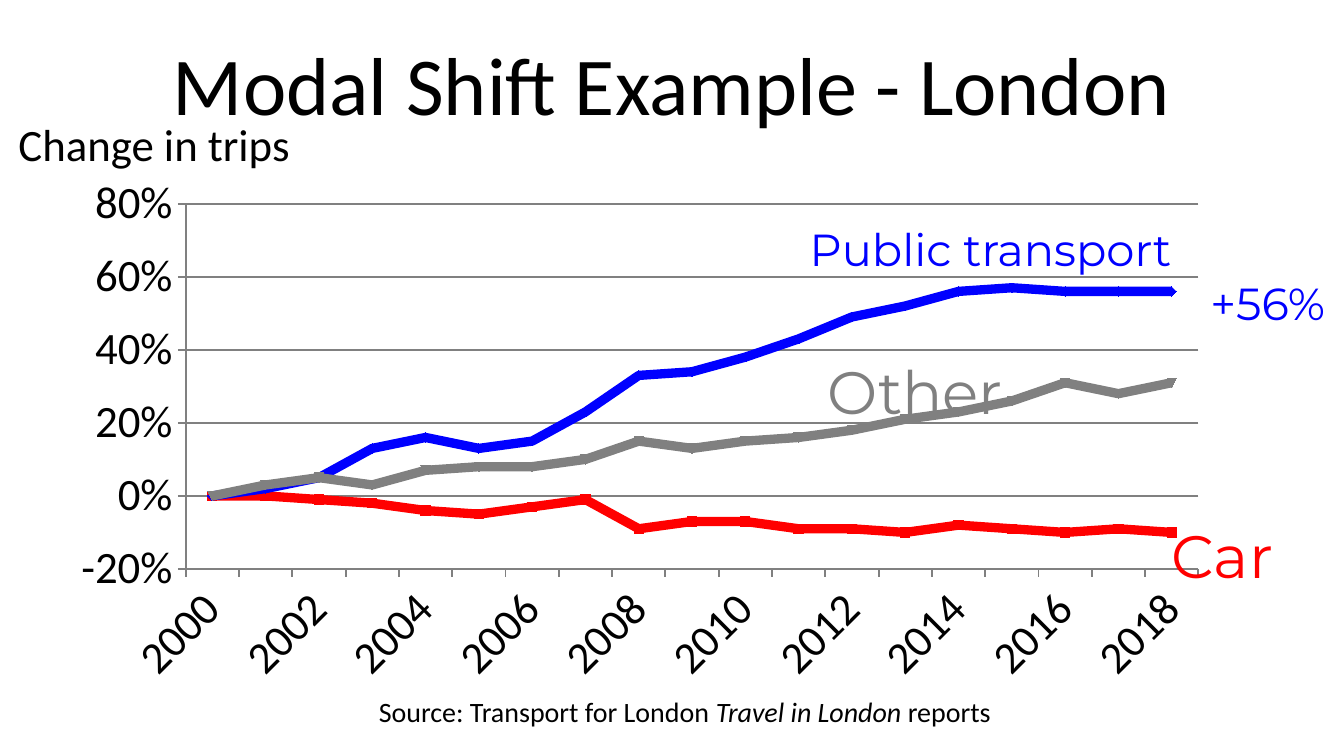
from dataclasses import dataclass

from lxml import etree
from pptx import Presentation
from pptx.chart.data import CategoryChartData
from pptx.dml.color import RGBColor
from pptx.enum.chart import XL_AXIS_CROSSES, XL_CHART_TYPE, XL_TICK_LABEL_POSITION, XL_TICK_MARK
from pptx.enum.text import MSO_ANCHOR, PP_ALIGN
from pptx.oxml import parse_xml
from pptx.oxml.ns import nsdecls, qn
from pptx.util import Cm, Pt

LINE = XL_CHART_TYPE.LINE
AT_MINIMUM = XL_AXIS_CROSSES.MINIMUM
LABELS_LOW = XL_TICK_LABEL_POSITION.LOW
TICK_OUT = XL_TICK_MARK.OUTSIDE
TICK_NONE = XL_TICK_MARK.NONE
LEFT, CENTER = PP_ALIGN.LEFT, PP_ALIGN.CENTER
MIDDLE = MSO_ANCHOR.MIDDLE


@dataclass(frozen=True)
class Theme:
    body: str = "Calibri"
    accent: str = "Montserrat"
    ink: RGBColor = RGBColor(0, 0, 0)
    car: RGBColor = RGBColor(255, 0, 0)
    transit: RGBColor = RGBColor(0, 0, 255)
    other: RGBColor = RGBColor(128, 128, 128)
    title: Pt = Pt(44)
    large: Pt = Pt(32)
    label: Pt = Pt(24)
    source: Pt = Pt(15)
    trend: Pt = Pt(5)
    rule: Pt = Pt(1)


THEME = Theme()
YEARS = range(2000, 2019)
TRENDS = [
    ("Car", THEME.car,
     [0, 0, -.01, -.02, -.04, -.05, -.03, -.01, -.09, -.07, -.07, -.09, -.09,
      -.1, -.08, -.09, -.1, -.09, -.1]),
    ("Public transport", THEME.transit,
     [0, .02, .05, .13, .16, .13, .15, .23, .33, .34, .38, .43, .49, .52, .56,
      .57, .56, .56, .56]),
    ("Other", THEME.other,
     [0, .03, .05, .03, .07, .08, .08, .1, .15, .13, .15, .16, .18, .21, .23,
      .26, .31, .28, .31]),
]
PLOT = {"x": 0.11, "y": 0.07, "w": 0.87, "h": 0.69}


def box(*lengths):
    return [Cm(length) for length in lengths]


def set_font(font, size, name=THEME.body, color=THEME.ink, italic=False):
    formats = {"size": size, "name": name, "bold": False, "italic": italic}
    for attribute, value in formats.items():
        setattr(font, attribute, value)
    font.color.rgb = color


def add_title(slide, area, text):
    title = slide.shapes.title
    for side, length in zip(("left", "top", "width", "height"), area):
        setattr(title, side, length)
    title.text_frame.text = text
    title.text_frame.vertical_anchor = MIDDLE
    heading = title.text_frame.paragraphs[0]
    heading.alignment = CENTER
    set_font(heading.runs[0].font, THEME.title)


def add_label(slide, area, runs, size, align=CENTER, name=THEME.accent, color=THEME.ink):
    frame = slide.shapes.add_textbox(*area).text_frame
    frame.word_wrap = True
    line = frame.paragraphs[0]
    line.alignment = align
    for text, italic in runs:
        run = line.add_run()
        run.text = text
        set_font(run.font, size, name, color, italic)


def fix_plot_area(chart):
    plot_area = chart.plots[0]._element.getparent()
    for layout in plot_area.findall(qn("c:layout")):
        plot_area.remove(layout)
    modes = "".join(f'<c:{side}Mode val="edge"/>' for side in "xy")
    sizes = "".join(f'<c:{side} val="{share}"/>' for side, share in PLOT.items())
    plot_area.insert(0, parse_xml(
        f'<c:layout {nsdecls("c")}><c:manualLayout><c:layoutTarget val="inner"/>'
        f'{modes}{sizes}</c:manualLayout></c:layout>'))


def slant_alternate_years(years):
    element = years._element
    element.find(qn("c:txPr")).find(qn("a:bodyPr")).set("rot", "-2700000")
    skip = etree.Element(qn("c:tickLblSkip"), val="2")
    element.find(qn("c:noMultiLvlLbl")).addprevious(skip)


def add_trend_chart(slide, area):
    data = CategoryChartData(number_format="0%")
    data.categories = YEARS
    for name, _, changes in TRENDS:
        data.add_series(name, changes)
    chart = slide.shapes.add_chart(LINE, *area, data).chart
    chart.has_legend = chart.has_title = False
    set_font(chart.font, THEME.label)
    chart.plots[0].vary_by_categories = False
    for series, (_, color, _) in zip(chart.plots[0].series, TRENDS):
        series.smooth = False
        series.marker.style = None
        series.format.line.width = THEME.trend
        series.format.line.color.rgb = color

    years, change = chart.category_axis, chart.value_axis
    scale = {"minimum_scale": -0.2, "maximum_scale": 0.8, "major_unit": 0.2,
             "crosses": AT_MINIMUM, "has_major_gridlines": True}
    for attribute, value in scale.items():
        setattr(change, attribute, value)
    for axis, number_format in ((years, "General"), (change, "0%")):
        axis.major_tick_mark, axis.minor_tick_mark = TICK_OUT, TICK_NONE
        axis.tick_label_position = LABELS_LOW
        axis.tick_labels.number_format = number_format
        axis.tick_labels.number_format_is_linked = False
        set_font(axis.tick_labels.font, THEME.label)
    for rule in (years, change, change.major_gridlines):
        rule.format.line.color.rgb = THEME.other
        rule.format.line.width = THEME.rule
    slant_alternate_years(years)
    fix_plot_area(chart)


def add_trend_labels(slide):
    labels = [
        ("Car", box(17.3, 9.68, 11.6, 1.6), THEME.large, THEME.car),
        ("Public transport", box(12.62, 4.06, 12.2, 1.27), THEME.label, THEME.transit),
        ("Other", box(11.2, 6.58, 12.2, 1.6), THEME.large, THEME.other),
        ("+56%", box(17.86, 5.08, 12.2, 1.27), THEME.label, THEME.transit),
    ]
    for text, area, size, color in labels:
        add_label(slide, area, [(text, False)], size, color=color)


def main():
    deck = Presentation()
    deck.slide_width, deck.slide_height = Cm(25.4), Cm(14.28)
    slide = deck.slides.add_slide(deck.slide_layouts[5])
    add_title(slide, box(1.27, 0.36, 22.86, 2.39), "Modal Shift Example - London")
    add_trend_chart(slide, box(1.09, 3.15, 22, 10))
    add_label(slide, box(0.1, 2.08, 6.2, 1.27), [("Change in trips", False)],
              THEME.label, LEFT, THEME.body)
    add_trend_labels(slide)
    source = [("Source: Transport for London ", False), ("Travel in London ", True),
              ("reports", False)]
    add_label(slide, box(6.91, 13, 18.49, 0.89), source, THEME.source, LEFT, THEME.body)
    deck.save("out.pptx")


if __name__ == "__main__":
    main()
